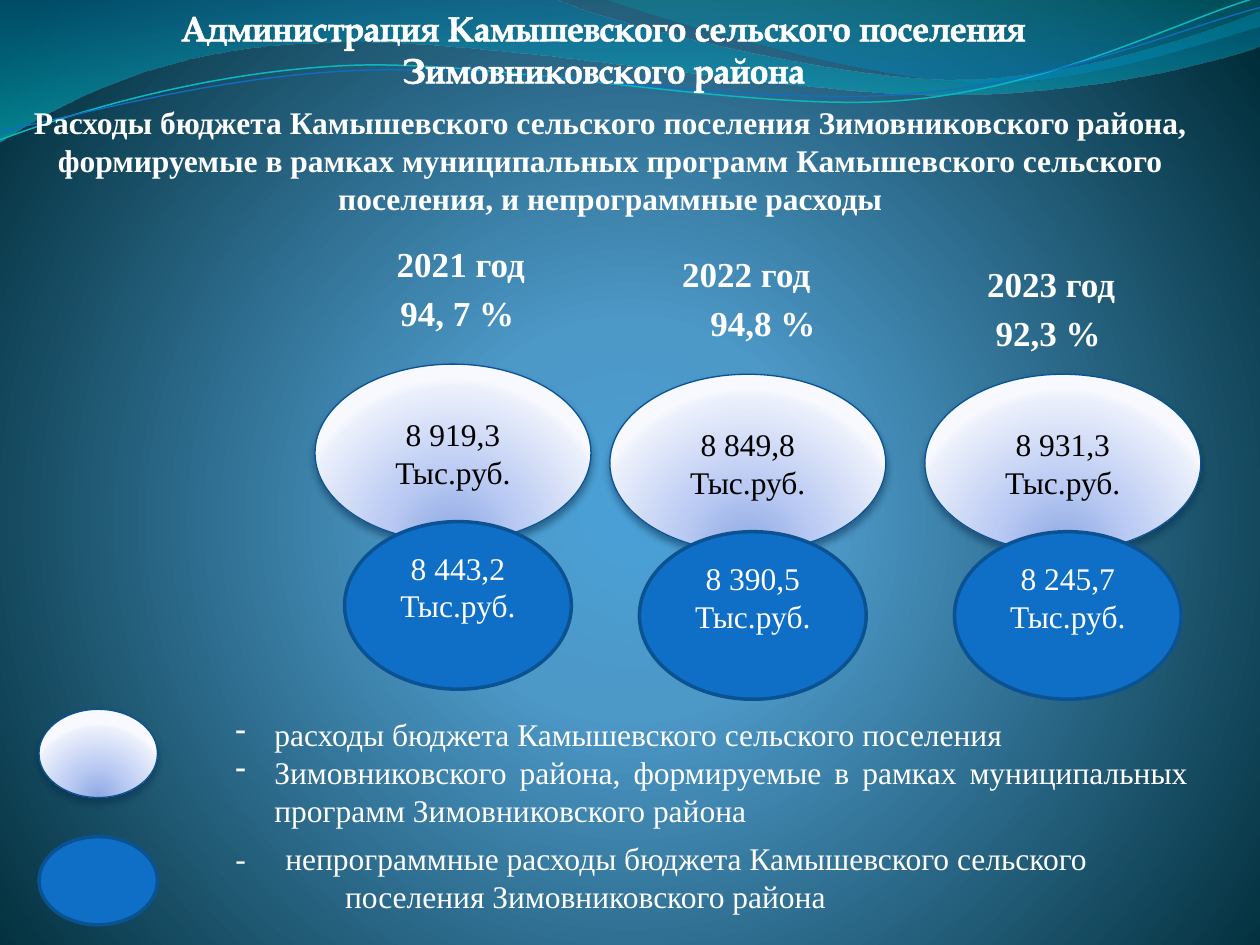
from lxml.etree import SubElement
from pptx import Presentation
from pptx.dml.color import RGBColor
from pptx.enum.shapes import MSO_SHAPE
from pptx.enum.text import MSO_ANCHOR, MSO_AUTO_SIZE, PP_ALIGN
from pptx.oxml.ns import qn
from pptx.util import Inches, Pt

COLUMNS, ROWS = 100, 75
CELL = Inches(0.1)

WHITE = RGBColor(0xFF, 0xFF, 0xFF)
BLACK = RGBColor(0x00, 0x00, 0x00)
BLUE = RGBColor(0x0F, 0x6F, 0xC6)
BLUE_EDGE = RGBColor(0x0B, 0x52, 0x92)
PEARL_EDGE = RGBColor(0x09, 0x52, 0x95)
SHADOW = RGBColor(0x04, 0x27, 0x47)
TEAL = RGBColor(0x0A, 0xB8, 0xBF)

BACKDROP_STOPS = [(0, RGBColor(0x4A, 0xA0, 0xD6), 100),
                  (25, RGBColor(0x4C, 0x98, 0xC7), 100),
                  (100, RGBColor(0x00, 0x2C, 0x38), 100)]
PEARL_STOPS = [(0, RGBColor(0x8D, 0xA8, 0xE3), 100),
               (43, RGBColor(0xBB, 0xCB, 0xF3), 100),
               (93, RGBColor(0xEA, 0xEF, 0xFB), 100),
               (100, RGBColor(0xF7, 0xF9, 0xFF), 100)]
WIDE_WAVE_STOPS = [(0, RGBColor(0x00, 0x74, 0xA1), 45),
                   (100, RGBColor(0x00, 0xC6, 0xCF), 55)]
RIGHT_WAVE_STOPS = [(0, RGBColor(0x00, 0xA1, 0xA9), 30),
                    (80, RGBColor(0x00, 0x8B, 0xBF), 45)]

WIDE_WAVE = [[(0, 0)], [(44, -0.1)],
             [(47.6, 1.7), (66.4, 6.3), (75.8, 6.3)],
             [(85.3, 6.3), (95.8, 2.6), (100, 0.9)], [(100.1, 3.6)],
             [(98.3, 4.4), (87, 7.6), (74.6, 7.5)],
             [(62.2, 7.5), (38.2, 2.8), (25.7, 3.4)],
             [(12.9, 3.6), (4.6, 8.3), (-0.1, 11.3)], [(0, 0)]]
RIGHT_WAVE = [[(47.9, -0.1)],
              [(50.9, 1.1), (68.2, 6.2), (76.9, 6.5)],
              [(85.6, 6.9), (96.1, 3.2), (100, 2.1)], [(100, 0)], [(47.9, -0.1)]]
TEAL_THREAD = [[(0, 11.1)],
               [(4.8, 9.3), (15.8, 5.7), (27.7, 5.2)],
               [(39.5, 4.7), (59.3, 8.9), (71.3, 8)],
               [(83.3, 7.1), (93.8, 1.5), (99.8, -0.2)]]
BLUE_THREAD = [[(0, 10.4)],
               [(4.7, 9.6), (16.4, 6.1), (28.3, 5.6)],
               [(40.3, 5.1), (59.7, 8.4), (71.7, 7.5)],
               [(83.6, 6.7), (94.1, 2.1), (100, 0.6)]]

YEARS = [
    ("2021 год", (30.5, 18.75), "94, 7 %", (28.9, 22.65), (25, 28.9), "8 919,3", "8 443,2"),
    ("2022 год", (53.15, 19.55), "94,8 %", (53.15, 23.4), (48.4, 29.7), "8 849,8", "8 390,5"),
    ("2023 год", (77.35, 20.35), "92,3 %", (75.8, 24.2), (73.4, 29.7), "8 931,3", "8 245,7"),
]


def cells(*counts):
    return [int(count * CELL) for count in counts]


def set_gradient(fill, holder, stops, angle=None, focus=None):
    fill.solid()
    solid = holder.find(qn("a:solidFill"))
    gradient = holder.makeelement(qn("a:gradFill"), {"rotWithShape": "1"})
    stop_list = SubElement(gradient, qn("a:gsLst"))
    for position, color, opacity in stops:
        stop = SubElement(stop_list, qn("a:gs"), pos=str(position * 1000))
        tint = SubElement(stop, qn("a:srgbClr"), val=str(color))
        if opacity < 100:
            SubElement(tint, qn("a:alpha"), val=str(opacity * 1000))
    if focus:
        radial = SubElement(gradient, qn("a:path"), {"path": "circle"})
        SubElement(radial, qn("a:fillToRect"),
                   {side: str(share * 1000) for side, share in zip("ltrb", focus)})
    else:
        SubElement(gradient, qn("a:lin"), ang=str(angle * 60000), scaled="1")
    holder.replace(solid, gradient)


def write_text(frame, lines, size=18, color=WHITE, bold=False, font="Times New Roman",
               align=PP_ALIGN.LEFT, hanging=0, bullet=None, lead=None, lead_spacing=0,
               outline=None):
    frame.word_wrap = True
    for index, line in enumerate(lines):
        paragraph = frame.paragraphs[0] if index == 0 else frame.add_paragraph()
        paragraph.alignment = align
        properties = paragraph._p.get_or_add_pPr()
        if hanging:
            properties.set("marL", str(Inches(hanging)))
            properties.set("indent", str(-Inches(hanging)))
        if bullet:
            SubElement(properties, qn("a:buFontTx"))
            SubElement(properties, qn("a:buChar"), char=bullet)
        for part in filter(None, (lead, line)):
            run = paragraph.add_run()
            run.text = part
            run.font.size = Pt(size)
            run.font.name = font
            run.font.bold = bold
            run.font.color.rgb = color
            run_format = run._r.get_or_add_rPr()
            if part == lead:
                run_format.set("spc", str(lead_spacing * 100))
            if outline:
                edge = run_format.makeelement(qn("a:ln"), {"w": str(Pt(outline))})
                edge_fill = SubElement(edge, qn("a:solidFill"))
                SubElement(edge_fill, qn("a:srgbClr"), val=str(color))
                run_format.insert(0, edge)


def add_label(slide, box, lines, **text_format):
    label = slide.shapes.add_textbox(*cells(*box))
    write_text(label.text_frame, lines, **text_format)
    label.text_frame.auto_size = MSO_AUTO_SIZE.SHAPE_TO_FIT_TEXT


def add_curve(slide, segments, closed):
    start, *ends = [cells(*segment[-1]) for segment in segments]
    builder = slide.shapes.build_freeform(*start)
    builder.add_line_segments(ends, close=closed)
    curve = builder.convert_to_shape()
    curve.shadow.inherit = False
    straights = list(curve._element.iter(qn("a:lnTo")))
    for straight, segment in zip(straights, segments[1:]):
        if len(segment) == 3:
            bend = straight.makeelement(qn("a:cubicBezTo"), {})
            for x, y in (cells(*point) for point in segment):
                SubElement(bend, qn("a:pt"), x=str(x - curve.left), y=str(y - curve.top))
            straight.getparent().replace(straight, bend)
    return curve


def add_wave(slide, segments, stops):
    wave = add_curve(slide, segments, True)
    set_gradient(wave.fill, wave._element.spPr, stops, angle=90)
    wave.line.fill.background()


def add_thread(slide, segments, color, width):
    thread = add_curve(slide, segments, False)
    thread.fill.background()
    thread.line.color.rgb = color
    thread.line.width = Pt(width)


def add_oval(slide, box, edge, width):
    oval = slide.shapes.add_shape(MSO_SHAPE.OVAL, *cells(*box))
    oval.shadow.inherit = False
    oval.line.color.rgb = edge
    oval.line.width = Pt(width)
    oval.text_frame.vertical_anchor = MSO_ANCHOR.MIDDLE
    return oval


def add_pearl_oval(slide, box, lines=()):
    oval = add_oval(slide, box, PEARL_EDGE, 0.75)
    properties = oval._element.spPr
    set_gradient(oval.fill, properties, PEARL_STOPS, focus=(50, 130, 50, -30))
    shadow = SubElement(properties.find(qn("a:effectLst")), qn("a:outerShdw"),
                        blurRad=str(Pt(4.5)), dist=str(Pt(3)), dir="5400000",
                        algn="ctr", rotWithShape="0")
    tint = SubElement(shadow, qn("a:srgbClr"), val=str(SHADOW))
    SubElement(tint, qn("a:alpha"), val="48000")
    write_text(oval.text_frame, lines, color=BLACK, align=PP_ALIGN.CENTER)


def add_blue_oval(slide, box, lines=()):
    oval = add_oval(slide, box, BLUE_EDGE, 2)
    oval.fill.solid()
    oval.fill.fore_color.rgb = BLUE
    oval.text_frame.margin_bottom = Inches(0.35)
    write_text(oval.text_frame, lines, align=PP_ALIGN.CENTER)


def add_year(slide, year, year_at, share, share_at, oval_at, program, other):
    heading = {"size": 20, "bold": True}
    left, top = oval_at
    add_label(slide, (*year_at, 14.8, 4.4), [year], **heading)
    add_label(slide, (*share_at, 14.8, 4.4), [share], align=PP_ALIGN.CENTER, **heading)
    add_pearl_oval(slide, (left, top, 21.9, 14.1), [program, "Тыс.руб."])
    add_blue_oval(slide, (left + 2.35, top + 12.5, 18, 13.3), [other, "Тыс.руб."])


def add_legend(slide):
    add_pearl_oval(slide, (3.1, 56.3, 9.4, 7))
    add_blue_oval(slide, (3.1, 66.4, 9.4, 7))
    add_label(slide, (17.7, 56.25, 77.6, 10.1),
              ["расходы бюджета Камышевского сельского поселения",
               "Зимовниковского района, формируемые в рамках муниципальных программ "
               "Зимовниковского района"],
              align=PP_ALIGN.JUSTIFY, hanging=0.31, bullet="-")
    add_label(slide, (17.7, 66.1, 77.8, 7.1),
              ["непрограммные расходы бюджета Камышевского сельского поселения "
               "Зимовниковского района"], hanging=0.87, lead="- ", lead_spacing=9)


def add_title(slide):
    title = slide.shapes.title
    title.left, title.top, title.width, title.height = cells(6.7, 0, 82.4, 7.7)
    title.text_frame.vertical_anchor = MSO_ANCHOR.TOP
    write_text(title.text_frame,
               ["Администрация Камышевского сельского поселения Зимовниковского района"],
               size=20, bold=True, font="TeX Gyre Pagella", align=PP_ALIGN.CENTER, outline=1.45)
    title.text_frame.auto_size = MSO_AUTO_SIZE.SHAPE_TO_FIT_TEXT
    slide.shapes._spTree.append(title._element)


def main():
    deck = Presentation()
    deck.slide_width, deck.slide_height = cells(COLUMNS, ROWS)
    slide = deck.slides.add_slide(deck.slide_layouts[5])
    backdrop = slide.background.fill
    backdrop.solid()
    set_gradient(backdrop, slide.element.find(".//" + qn("p:bgPr")), BACKDROP_STOPS,
                 focus=(10, 110, 10, 100))
    add_wave(slide, WIDE_WAVE, WIDE_WAVE_STOPS)
    add_wave(slide, RIGHT_WAVE, RIGHT_WAVE_STOPS)
    add_thread(slide, TEAL_THREAD, TEAL, 0.85)
    add_thread(slide, BLUE_THREAD, BLUE, 0.75)
    add_label(slide, (1.6, 7.7, 93.7, 10.1),
              ["Расходы бюджета Камышевского сельского поселения Зимовниковского района, "
               "формируемые в рамках муниципальных программ Камышевского сельского "
               "поселения, и непрограммные расходы"], bold=True, align=PP_ALIGN.CENTER)
    for year in YEARS:
        add_year(slide, *year)
    add_legend(slide)
    add_title(slide)
    deck.save("out.pptx")


if __name__ == "__main__":
    main()
